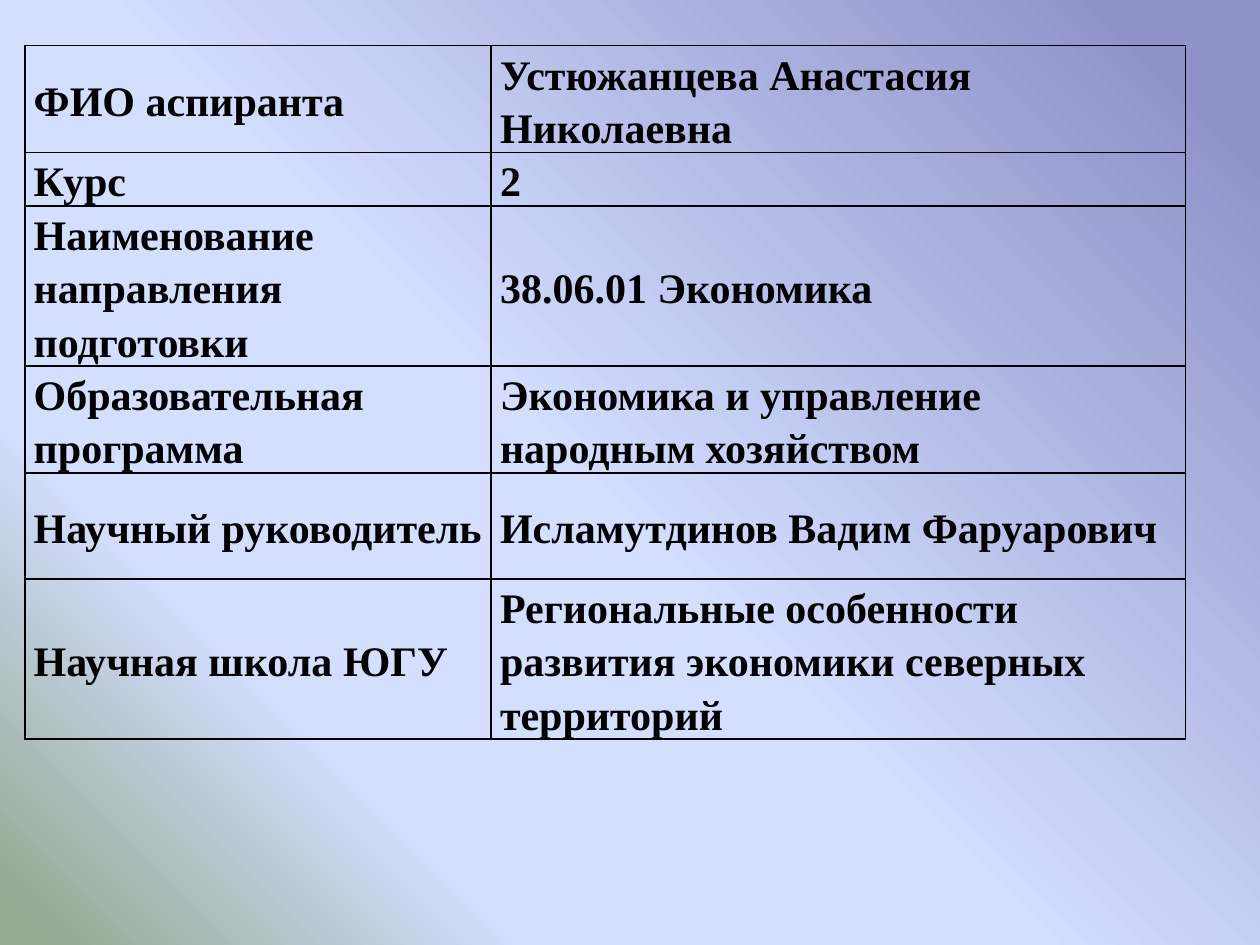
from dataclasses import dataclass

from lxml.etree import SubElement
from pptx import Presentation
from pptx.dml.color import RGBColor
from pptx.enum.text import MSO_ANCHOR
from pptx.oxml.ns import qn
from pptx.slide import Slide
from pptx.table import Table, _Cell
from pptx.util import Cm, Pt


@dataclass(frozen=True)
class Theme:
    font: str = "Times New Roman"
    text_size: int = 24
    ink: str = "000000"
    border_width: int = 1
    line_spacing: float = 1.15
    line_height: float = 1.07
    gradient: tuple = ((7, "8F93C9"), (53, "D4DEFF"), (76, "D4DEFF"), (97, "96AB94"))
    gradient_angle: int = 225


@dataclass(frozen=True)
class ProfileRow:
    label: str
    value: str
    lines: int
    label_anchor: MSO_ANCHOR = MSO_ANCHOR.MIDDLE
    value_anchor: MSO_ANCHOR = MSO_ANCHOR.BOTTOM


THEME = Theme()
COLUMN_WIDTHS = (9.4, 14)
PROFILE = (
    ProfileRow("ФИО аспиранта", "Устюжанцева Анастасия Николаевна", 2),
    ProfileRow("Курс", "2", 1, label_anchor=MSO_ANCHOR.BOTTOM),
    ProfileRow("Наименование направления подготовки", "38.06.01 Экономика", 3,
               value_anchor=MSO_ANCHOR.MIDDLE),
    ProfileRow("Образовательная программа", "Экономика и управление народным хозяйством", 2,
               label_anchor=MSO_ANCHOR.BOTTOM),
    ProfileRow("Научный руководитель", "Исламутдинов Вадим Фаруарович", 2,
               value_anchor=MSO_ANCHOR.MIDDLE),
    ProfileRow("Научная школа ЮГУ",
               "Региональные особенности развития экономики северных территорий", 3),
)


def paint_background(slide: Slide) -> None:
    fill = slide.background.fill
    fill.gradient()
    fill.gradient_angle = THEME.gradient_angle
    stops = slide.element.find(".//" + qn("a:gsLst"))
    for stop in list(stops):
        stops.remove(stop)
    for position, color in THEME.gradient:
        stop = SubElement(stops, qn("a:gs"), pos=str(position * 1000))
        SubElement(stop, qn("a:srgbClr"), val=color)


def draw_borders(cell: _Cell) -> None:
    properties = cell._tc.get_or_add_tcPr()
    for side in ("lnL", "lnR", "lnT", "lnB"):
        line = SubElement(properties, qn(f"a:{side}"), w=str(Pt(THEME.border_width)))
        fill = SubElement(line, qn("a:solidFill"))
        SubElement(fill, qn("a:srgbClr"), val=THEME.ink)


def write_cell(cell: _Cell, text: str, anchor: MSO_ANCHOR) -> None:
    draw_borders(cell)
    cell.fill.background()
    cell.vertical_anchor = anchor
    cell.margin_left = cell.margin_right = Cm(0.18)
    cell.margin_top = cell.margin_bottom = 0
    cell.text_frame.text = text
    para = cell.text_frame.paragraphs[0]
    para.line_spacing = THEME.line_spacing
    span = para.runs[0]
    span.font.name = THEME.font
    span.font.size = Pt(THEME.text_size)
    span.font.bold = True
    span.font.color.rgb = RGBColor.from_string(THEME.ink)


def add_profile_table(slide: Slide) -> Table:
    height = sum(row.lines for row in PROFILE) * THEME.line_height
    frame = slide.shapes.add_table(len(PROFILE), len(COLUMN_WIDTHS), Cm(0.5), Cm(0.92),
                                   Cm(sum(COLUMN_WIDTHS)), Cm(height))
    table = frame.table
    table.first_row = False
    table.horz_banding = False
    for column, width in zip(table.columns, COLUMN_WIDTHS):
        column.width = Cm(width)
    for index, row in enumerate(PROFILE):
        table.rows[index].height = Cm(row.lines * THEME.line_height)
        write_cell(table.cell(index, 0), row.label, row.label_anchor)
        write_cell(table.cell(index, 1), row.value, row.value_anchor)
    return table


def main() -> None:
    deck = Presentation()
    deck.slide_width = Cm(25.4)
    deck.slide_height = Cm(19.05)
    page = deck.slides.add_slide(deck.slide_layouts[6])
    paint_background(page)
    add_profile_table(page)
    deck.save("out.pptx")


if __name__ == "__main__":
    main()
